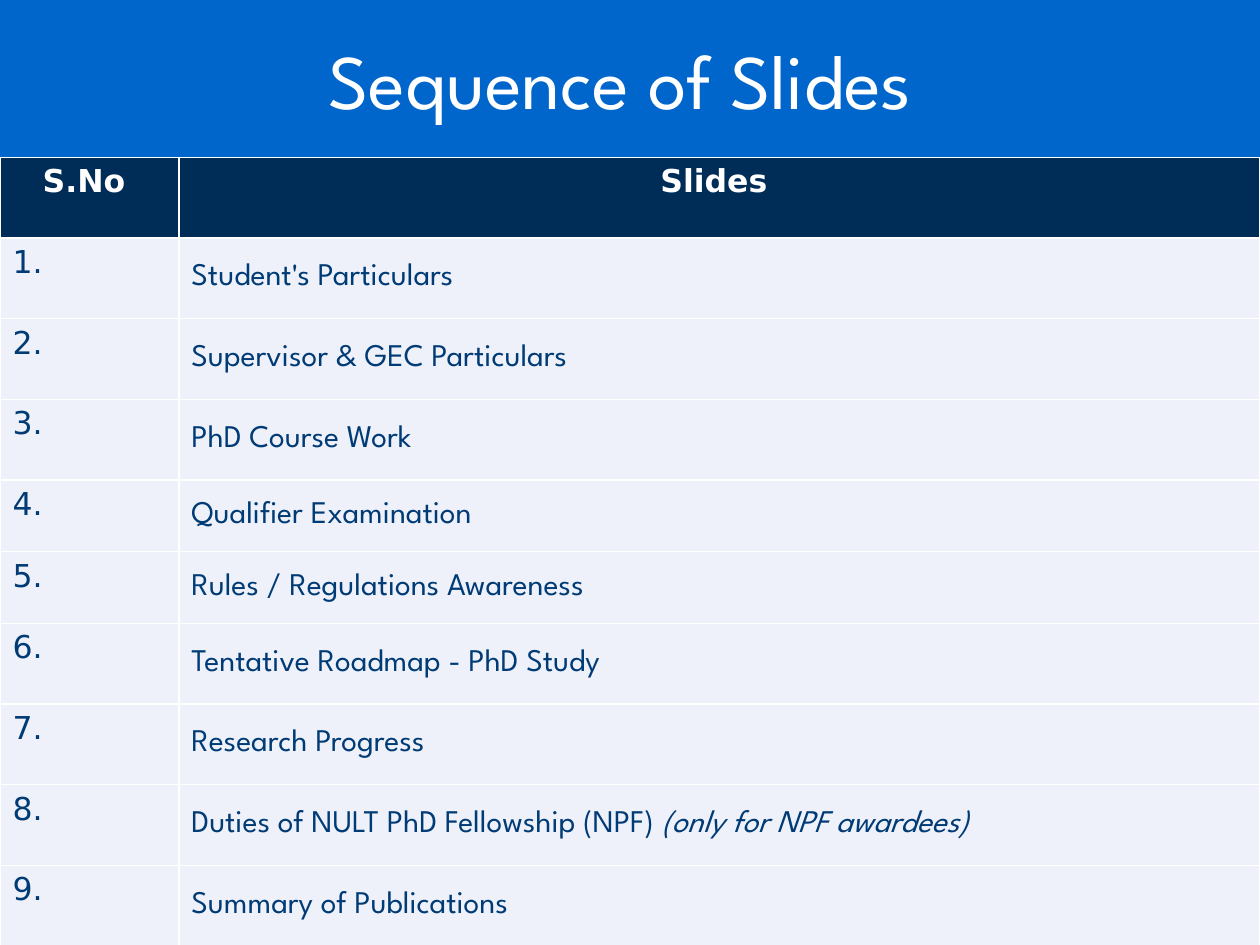
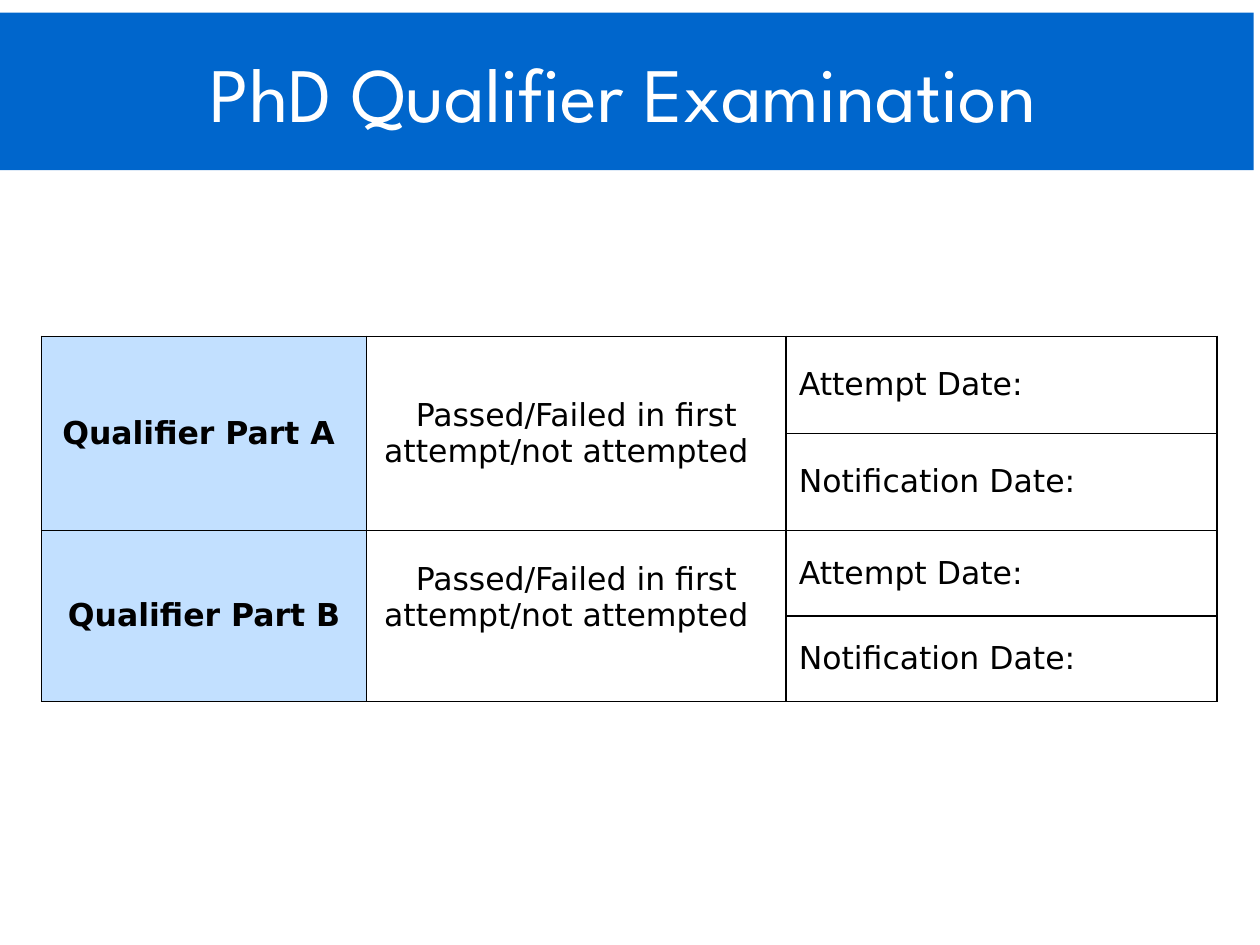
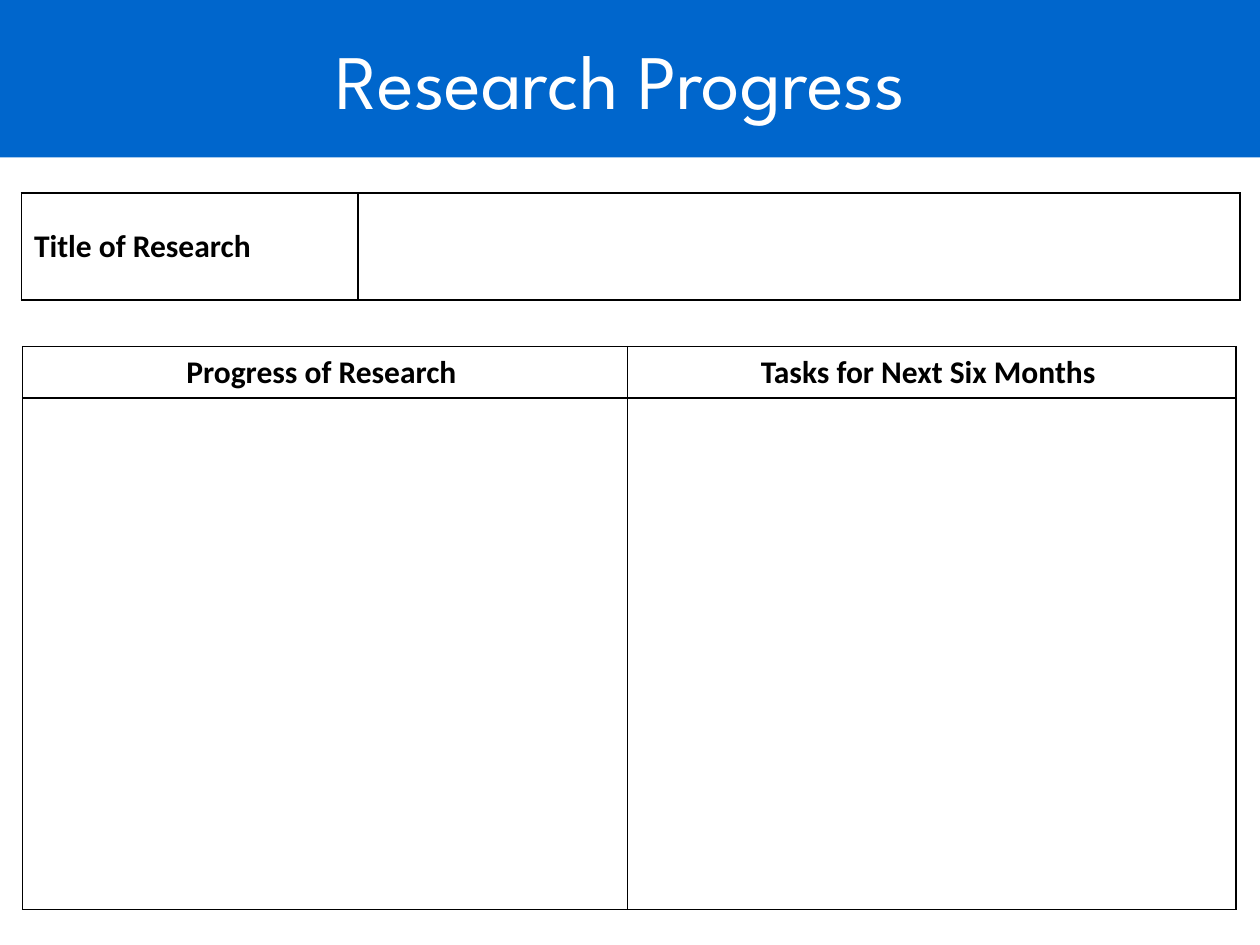
from lxml import etree
from pptx import Presentation
from pptx.dml.color import RGBColor
from pptx.enum.shapes import MSO_SHAPE
from pptx.enum.text import MSO_ANCHOR, PP_ALIGN
from pptx.oxml.ns import qn
from pptx.util import Inches, Pt

RECT = MSO_SHAPE.RECTANGLE
TOP, MIDDLE = MSO_ANCHOR.TOP, MSO_ANCHOR.MIDDLE
LEFT, CENTER = PP_ALIGN.LEFT, PP_ALIGN.CENTER

COLORS = {
    "band": "0066CC",
    "head": "002C58",
    "row": "EEF1F9",
    "ink": "003B76",
    "part": "C2E0FF",
    "white": "FFFFFF",
    "black": "000000",
}
SPARTAN, DEJAVU, CALIBRI = "League Spartan", "DejaVu Sans", "Calibri"

TOPICS = [
    "Student's Particulars",
    "Supervisor & GEC Particulars",
    "PhD Course Work",
    "Qualifier Examination",
    "Rules / Regulations Awareness",
    "Tentative Roadmap - PhD Study",
    "Research Progress",
    "Duties of NULT PhD Fellowship (NPF) ",
    "Summary of Publications",
]
NOTES = {8: "(only for NPF awardees)"}


def rgb(name):
    return RGBColor.from_string(COLORS[name])


def write(frame, text, font=DEJAVU, size=18, color="black", bold=False,
          italic=False, align=LEFT):
    """Add one run to the first paragraph of a text frame."""
    para = frame.paragraphs[0]
    para.alignment = align
    run = para.add_run()
    run.text = text
    face = run.font
    face.name, face.size = font, Pt(size)
    face.bold, face.italic = bold, italic
    face.color.rgb = rgb(color)


def add_title(slide, text, left=0, top=0):
    band = slide.shapes.add_shape(RECT, Inches(left), Inches(top),
                                  Inches(10), Inches(1.25))
    band.shadow.inherit = False
    band.fill.solid()
    band.fill.fore_color.rgb = rgb("band")
    band.line.fill.background()
    band.text_frame.vertical_anchor = MIDDLE
    write(band.text_frame, text, font=SPARTAN, size=44, color="white",
          align=CENTER)


def add_edges(cell, color):
    props = cell._tc.get_or_add_tcPr()
    for side in ("lnL", "lnR", "lnT", "lnB"):
        line = etree.SubElement(props, qn("a:" + side), w=str(Pt(1)))
        fill = etree.SubElement(line, qn("a:solidFill"))
        etree.SubElement(fill, qn("a:srgbClr"), val=COLORS[color])


def add_grid(slide, left, top, cols, rows, edge="black"):
    """Add a plain table with the given column widths and row heights."""
    grid = slide.shapes.add_table(
        len(rows), len(cols), Inches(left), Inches(top),
        Inches(sum(cols)), Inches(sum(rows))).table
    grid.first_row = grid.horz_banding = False
    for col, width in zip(grid.columns, cols):
        col.width = Inches(width)
    for row, height in zip(grid.rows, rows):
        row.height = Inches(height)
    for cell in grid.iter_cells():
        add_edges(cell, edge)
        cell.fill.background()
    return grid


def fill_cell(cell, text, fill=None, anchor=MIDDLE, **style):
    cell.vertical_anchor = anchor
    if fill:
        cell.fill.solid()
        cell.fill.fore_color.rgb = rgb(fill)
    write(cell.text_frame, text, **style)


def add_outline(slide):
    add_title(slide, "Sequence of Slides ")
    rows = [0.64] * 4 + [0.57] * 2 + [0.64] * 4
    grid = add_grid(slide, 0, 1.25, [1.42, 8.58], rows, edge="white")
    for col, label in enumerate(["S.No ", "Slides "]):
        fill_cell(grid.cell(0, col), label, fill="head", anchor=TOP,
                  color="white", bold=True, align=CENTER)
    for num, topic in enumerate(TOPICS, 1):
        fill_cell(grid.cell(num, 0), f"{num}.", fill="row", anchor=TOP,
                  color="ink")
        cell = grid.cell(num, 1)
        fill_cell(cell, topic, fill="row", font=SPARTAN, color="ink")
        if num in NOTES:
            write(cell.text_frame, NOTES[num], font=SPARTAN, color="ink",
                  italic=True)


def add_exam(slide):
    add_title(slide, "PhD Qualifier Examination", left=-0.05, top=0.1)
    grid = add_grid(slide, 0.33, 2.67, [2.58, 3.33, 3.42],
                    [0.77, 0.77, 0.68, 0.68])
    for row, part in ((0, "Qualifier Part A "), (2, "Qualifier Part B")):
        for col in (0, 1):
            grid.cell(row, col).merge(grid.cell(row + 1, col))
        fill_cell(grid.cell(row, 0), part, fill="part", bold=True,
                  align=CENTER)
        fill_cell(grid.cell(row, 1),
                  "Passed/Failed in first attempt/not attempted  ",
                  align=CENTER)
        for step, label in enumerate(["Attempt Date:", "Notification Date:"]):
            fill_cell(grid.cell(row + step, 2), label)
    # The second result sits half a line above the middle
    grid.cell(2, 1).margin_bottom = Inches(0.34)


def add_progress(slide):
    add_title(slide, "Research Progress ")
    topic = add_grid(slide, 0.17, 1.53, [2.67, 7], [0.85])
    fill_cell(topic.cell(0, 0), "Title of Research", font=CALIBRI, bold=True)
    tasks = add_grid(slide, 0.18, 2.75, [4.8, 4.83], [0.41, 4.06])
    tasks.rows[1].height = Inches(4.06)
    for col, label in enumerate(["Progress of Research ",
                                 "Tasks for Next Six Months "]):
        fill_cell(tasks.cell(0, col), label, font=CALIBRI, bold=True,
                  align=CENTER)


def main():
    deck = Presentation()
    deck.slide_width, deck.slide_height = Inches(10), Inches(7.5)
    blank = deck.slide_layouts[6]
    for build in (add_outline, add_exam, add_progress):
        build(deck.slides.add_slide(blank))
    deck.save("out.pptx")


if __name__ == "__main__":
    main()
